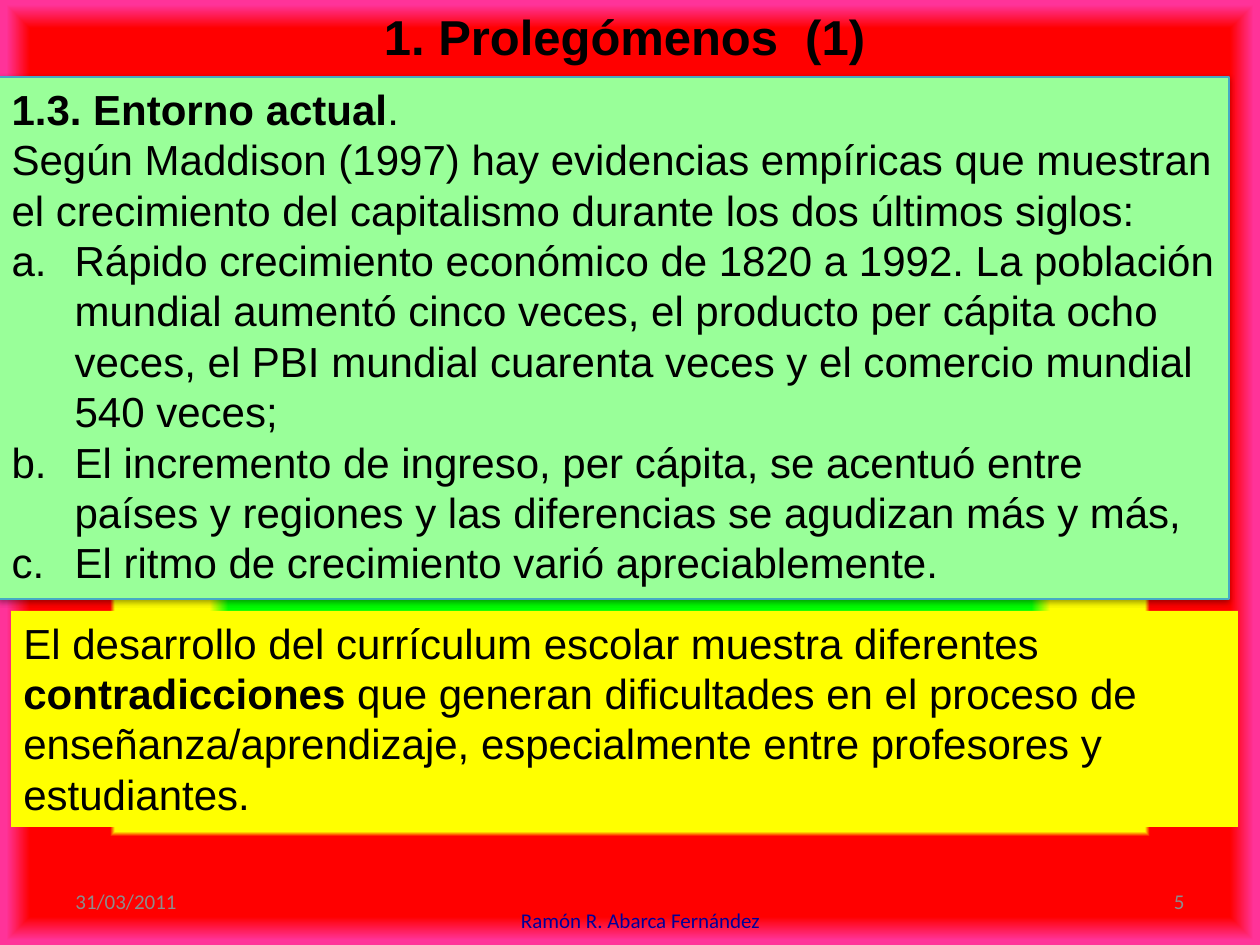
from dataclasses import dataclass

from lxml.etree import SubElement
from pptx import Presentation
from pptx.dml.color import RGBColor
from pptx.enum.shapes import MSO_SHAPE
from pptx.enum.text import MSO_ANCHOR, MSO_AUTO_SIZE, PP_ALIGN
from pptx.oxml import parse_xml
from pptx.oxml.ns import nsdecls, qn
from pptx.util import Pt

TITLE = "1. Prolegómenos  (1)"
CONTEXT = [
    ([("1.3. Entorno actual", True), (".", False)], False),
    ([("Según Maddison (1997) hay evidencias empíricas que muestran el crecimiento "
       "del capitalismo durante los dos últimos siglos:", False)], False),
    ([("Rápido crecimiento económico de 1820 a 1992. La población mundial aumentó "
       "cinco veces, el producto per cápita ocho veces, el PBI mundial cuarenta veces "
       "y el comercio mundial 540 veces;", False)], True),
    ([("El incremento de ingreso, per cápita, se acentuó entre países y regiones y "
       "las diferencias se agudizan más y más,", False)], True),
    ([("El ritmo de crecimiento varió apreciablemente.", False)], True),
]
CONCLUSION = [
    ([("El desarrollo del currículum escolar muestra diferentes ", False),
      ("contradicciones", True),
      (" que generan dificultades en el proceso de enseñanza/aprendizaje, "
       "especialmente entre profesores y estudiantes.", False)], False),
]


@dataclass(frozen=True)
class Theme:
    heading_font: str = "Arial"
    footer_font: str = "Calibri"
    title_size: int = 28
    body_size: int = 24
    footer_size: int = 12
    text: str = "000000"
    context_fill: str = "99FF99"
    context_line: str = "46AAC5"
    conclusion_fill: str = "FFFF00"
    muted: str = "8C8C8C"
    author: str = "000099"
    background: tuple = (
        (3, "00FF00"), (52, "00FF00"), (56, "FFFF00"), (76, "FFFF00"),
        (77, "FF0000"), (94, "FF0000"), (99, "FF3399"),
    )


THEME = Theme()
FOOTERS = [
    ("31/03/2011", (63, 876, 294, 50), PP_ALIGN.LEFT, THEME.muted),
    ("Ramón R. Abarca Fernández", (441, 895, 399, 50), PP_ALIGN.CENTER, THEME.author),
    ("5", (903, 876, 294, 50), PP_ALIGN.RIGHT, THEME.muted),
]


def px(value):
    return round(value * 914400 / 126)


def place(shape, area):
    shape.left, shape.top, shape.width, shape.height = map(px, area)


def set_font(para, name, size, color, bold=False):
    para.font.name = name
    para.font.size = Pt(size)
    para.font.bold = bold
    para.font.color.rgb = RGBColor.from_string(color)


def set_frame(frame, anchor):
    frame.word_wrap = True
    frame.auto_size = MSO_AUTO_SIZE.NONE
    frame.vertical_anchor = anchor


def paint_background(slide):
    stops = "".join(
        f'<a:gs pos="{position * 1000}"><a:srgbClr val="{color}"/></a:gs>'
        for position, color in THEME.background
    )
    slide.element.cSld.insert(0, parse_xml(
        f'<p:bg {nsdecls("p", "a")}><p:bgPr><a:gradFill rotWithShape="1">'
        f'<a:gsLst>{stops}</a:gsLst><a:path path="rect">'
        '<a:fillToRect l="50000" t="50000" r="50000" b="50000"/></a:path>'
        '</a:gradFill><a:effectLst/></p:bgPr></p:bg>'
    ))


def write_paragraphs(frame, paragraphs):
    set_frame(frame, MSO_ANCHOR.TOP)
    for index, (runs, lettered) in enumerate(paragraphs):
        para = frame.add_paragraph() if index else frame.paragraphs[0]
        para.alignment = PP_ALIGN.LEFT
        para.space_before = Pt(0)
        set_font(para, THEME.heading_font, THEME.body_size, THEME.text)
        properties = para._p.get_or_add_pPr()
        indent = px(63) if lettered else 0
        properties.set("marL", str(indent))
        properties.set("indent", str(-indent))
        bullet = parse_xml(
            f'<a:buAutoNum {nsdecls("a")} type="alphaLcPeriod"/>' if lettered
            else f'<a:buNone {nsdecls("a")}/>'
        )
        properties.find(qn("a:defRPr")).addprevious(bullet)
        for text, bold in runs:
            span = para.add_run()
            span.text = text
            span.font.bold = bold


def fill_box(box, color):
    box.fill.solid()
    box.fill.fore_color.rgb = RGBColor.from_string(color)
    box.shadow.inherit = False


def add_drop_shadow(box):
    effects = box.element.spPr.find(qn("a:effectLst"))
    shadow = SubElement(effects, qn("a:outerShdw"), blurRad=str(Pt(3.1)),
                        dist=str(Pt(1.6)), dir="5400000", rotWithShape="0")
    color = SubElement(shadow, qn("a:srgbClr"), val=THEME.text)
    SubElement(color, qn("a:alpha"), val="38000")


def add_title(slide):
    title = slide.shapes.title
    place(title, (18, 0, 1213, 72))
    set_frame(title.text_frame, MSO_ANCHOR.TOP)
    title.text_frame.text = TITLE
    para = title.text_frame.paragraphs[0]
    para.alignment = PP_ALIGN.CENTER
    set_font(para, THEME.heading_font, THEME.title_size, THEME.text, True)


def add_context(slide):
    box = slide.placeholders[1]
    place(box, (-1, 77, 1230, 522))
    fill_box(box, THEME.context_fill)
    box.line.color.rgb = RGBColor.from_string(THEME.context_line)
    box.line.width = Pt(0.75)
    add_drop_shadow(box)
    write_paragraphs(box.text_frame, CONTEXT)


def add_conclusion(slide):
    area = map(px, (11, 611, 1227, 216))
    box = slide.shapes.add_shape(MSO_SHAPE.RECTANGLE, *area)
    fill_box(box, THEME.conclusion_fill)
    box.line.fill.background()
    write_paragraphs(box.text_frame, CONCLUSION)


def add_footers(slide):
    for text, area, alignment, color in FOOTERS:
        box = slide.shapes.add_textbox(*map(px, area))
        set_frame(box.text_frame, MSO_ANCHOR.MIDDLE)
        para = box.text_frame.paragraphs[0]
        para.text = text
        para.alignment = alignment
        set_font(para, THEME.footer_font, THEME.footer_size, color)


def main():
    deck = Presentation()
    deck.slide_width, deck.slide_height = px(1260), px(945)
    page = deck.slides.add_slide(deck.slide_layouts[1])
    paint_background(page)
    add_context(page)
    add_conclusion(page)
    add_footers(page)
    add_title(page)
    deck.save("out.pptx")


if __name__ == "__main__":
    main()
